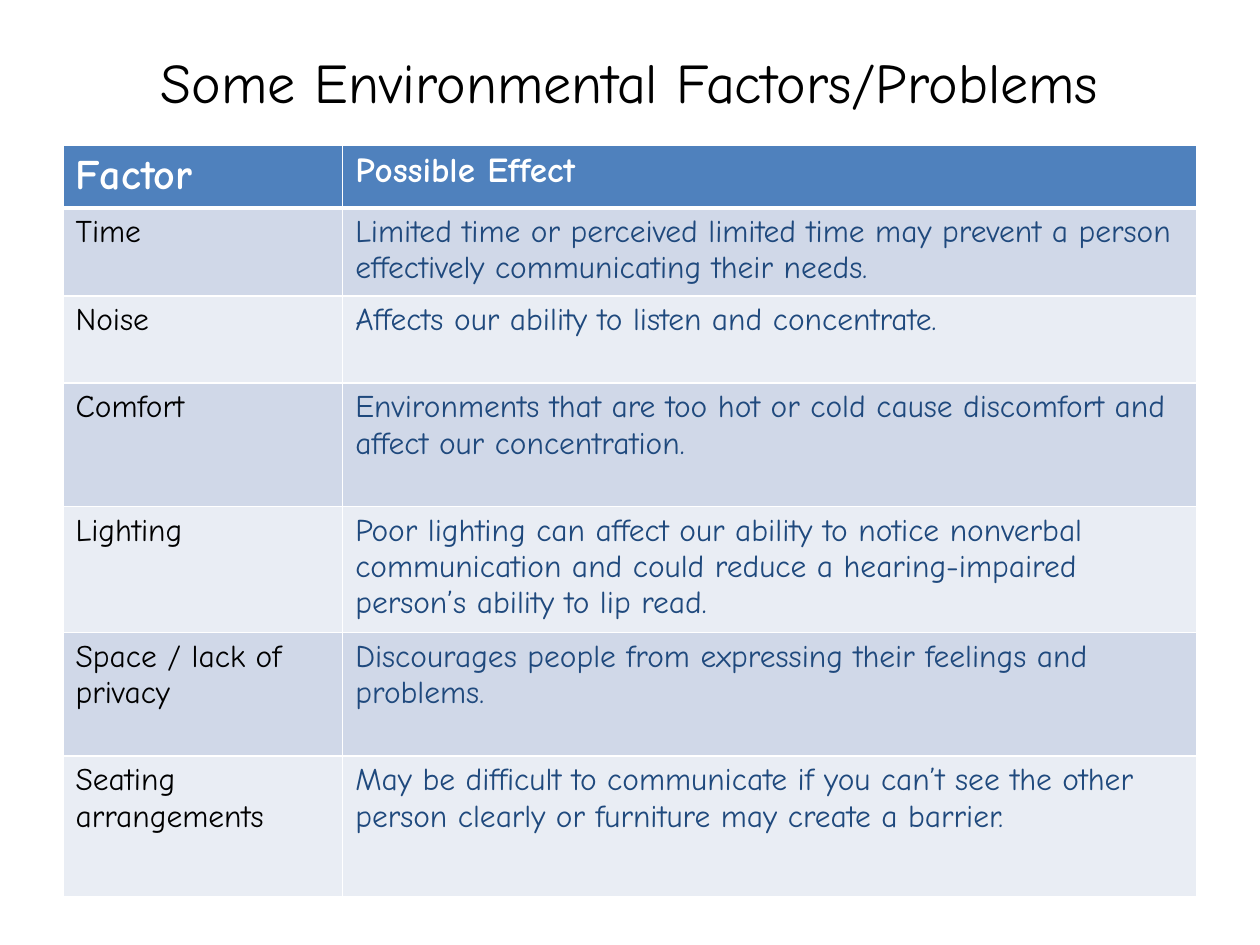
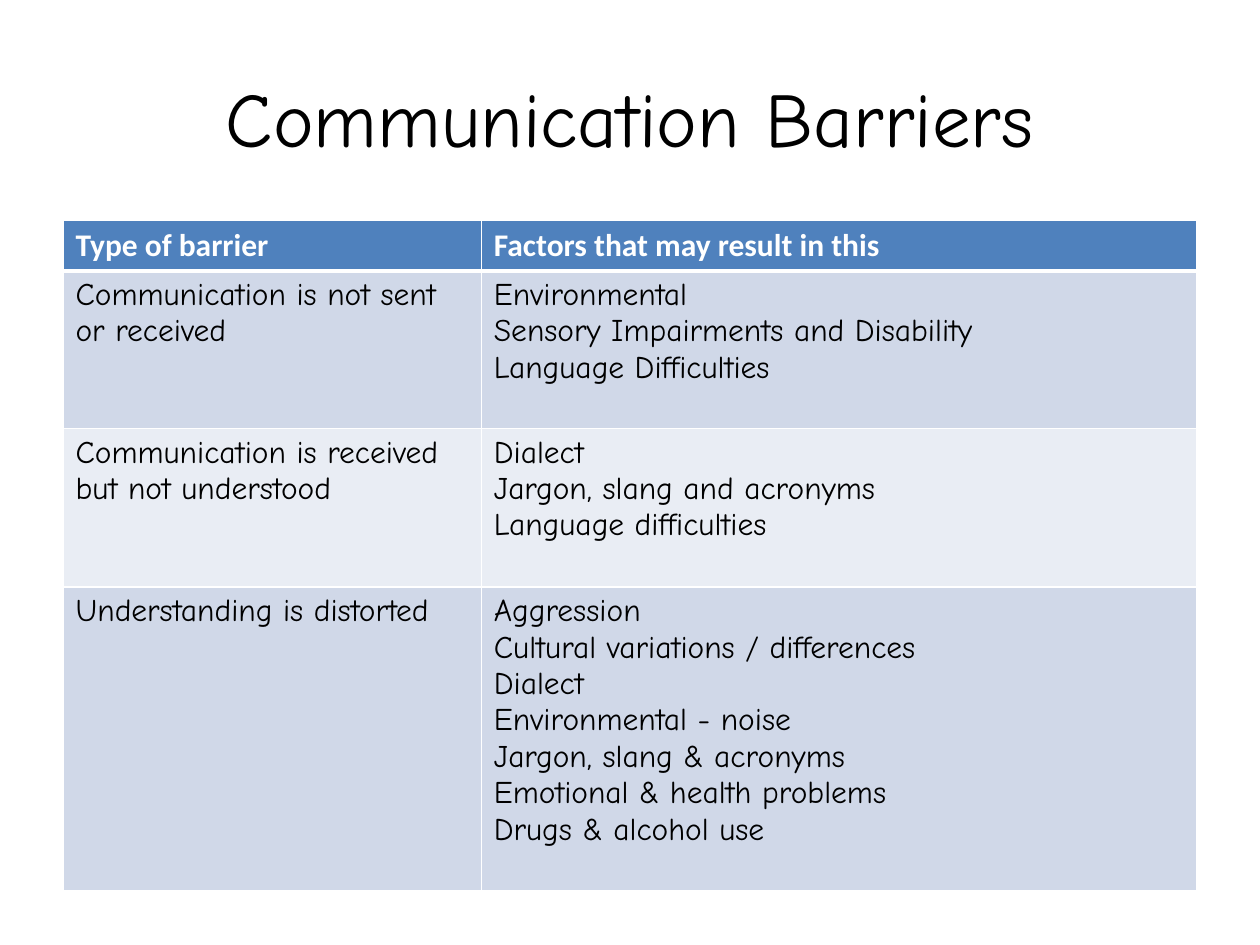
from dataclasses import dataclass

from lxml import etree
from pptx import Presentation
from pptx.dml.color import RGBColor
from pptx.enum.text import MSO_ANCHOR, PP_ALIGN
from pptx.oxml.ns import qn
from pptx.util import Inches, Pt

CENTER, MIDDLE = PP_ALIGN.CENTER, MSO_ANCHOR.MIDDLE
HAND, PLAIN = "Comic Neue", "Calibri"
BLACK, WHITE, NAVY, BLUE = "000000", "FFFFFF", "1F497D", "4F81BD"
BANDS = ("D0D8E8", "E9EDF4")
LEFT, WIDTH = 0.5, 9
BODY_SIZE = 18


@dataclass
class Style:
    size: float
    color: str = BLACK
    font: str = HAND
    bold: bool = False


@dataclass
class Page:
    title: str
    title_size: float
    title_height: float
    top: float
    widths: tuple[float, ...]
    heights: tuple[float, ...]
    heads: tuple[Style, ...]
    effect_color: str
    rows: list[tuple[str, str]]


PAGES = [
    Page(
        "Some Environmental Factors/Problems", 32, 0.69, 1.15, (2.22, 6.78),
        (0.48, 0.69, 0.69, 0.98, 0.98, 0.98, 1.12),
        (Style(24, WHITE, bold=True), Style(20, WHITE, bold=True)), NAVY,
        [
            ("Factor", "Possible Effect"),
            ("Time", "Limited time or perceived limited time may prevent a person "
                     "effectively communicating their needs."),
            ("Noise", "Affects our ability to listen and concentrate."),
            ("Comfort", "Environments that are too hot or cold cause discomfort and "
                        "affect our concentration."),
            ("Lighting", "Poor lighting can affect our ability to notice nonverbal "
                         "communication and could reduce a hearing-impaired "
                         "person’s ability to lip read."),
            ("Space / lack of privacy",
             "Discourages people from expressing their feelings and problems."),
            ("Seating arrangements",
             "May be difficult to communicate if you can’t see the other "
             "person clearly or furniture may create a barrier."),
        ],
    ),
    Page(
        "Communication Barriers", 44, 1.25, 1.75, (3.32, 5.68),
        (0.4, 1.25, 1.26, 2.41),
        (Style(18, WHITE, PLAIN, True),) * 2, BLACK,
        [
            ("Type of barrier", "Factors that may result in this"),
            ("Communication is not sent or received",
             "Environmental\nSensory Impairments and Disability\n"
             "Language Difficulties"),
            ("Communication is received but not understood",
             "Dialect\nJargon, slang and acronyms\nLanguage difficulties"),
            ("Understanding is distorted",
             "Aggression\nCultural variations / differences\nDialect\n"
             "Environmental - noise\nJargon, slang & acronyms\n"
             "Emotional & health problems\nDrugs & alcohol use"),
        ],
    ),
]


def rgb(color: str) -> RGBColor:
    return RGBColor.from_string(color)


def write(frame, text: str, style: Style, align=None) -> None:
    """Put each line of the text in its own paragraph."""
    for i, line in enumerate(text.split("\n")):
        para = frame.add_paragraph() if i else frame.paragraphs[0]
        para.alignment = align
        run = para.add_run()
        run.text = line
        font = run.font
        font.name, font.size, font.bold = style.font, Pt(style.size), style.bold
        font.color.rgb = rgb(style.color)


def edge(cell, row: int) -> None:
    """Draw white cell borders, with a thick rule under the header."""
    props = cell._tc.get_or_add_tcPr()
    thick = {0: "lnB", 1: "lnT"}.get(row)
    for side in ("lnL", "lnR", "lnT", "lnB"):
        width = Pt(3 if side == thick else 1)
        line = etree.SubElement(props, qn(f"a:{side}"), w=str(width))
        fill = etree.SubElement(line, qn("a:solidFill"))
        etree.SubElement(fill, qn("a:srgbClr"), val=WHITE)


def add_title(slide, page: Page) -> None:
    box = slide.shapes.add_textbox(
        Inches(LEFT), Inches(0.3), Inches(WIDTH), Inches(page.title_height))
    frame = box.text_frame
    frame.word_wrap = True
    frame.vertical_anchor = MIDDLE
    write(frame, page.title, Style(page.title_size), CENTER)


def add_grid(slide, page: Page) -> None:
    table = slide.shapes.add_table(
        len(page.rows), len(page.widths), Inches(LEFT), Inches(page.top),
        Inches(WIDTH), Inches(sum(page.heights))).table
    table.first_row = table.horz_banding = False
    for col, width in zip(table.columns, page.widths):
        col.width = Inches(width)
    for row, height in zip(table.rows, page.heights):
        row.height = Inches(height)
    body = (Style(BODY_SIZE), Style(BODY_SIZE, page.effect_color))
    for r, texts in enumerate(page.rows):
        styles = body if r else page.heads
        for c, (text, style) in enumerate(zip(texts, styles)):
            cell = table.cell(r, c)
            edge(cell, r)
            cell.fill.solid()
            cell.fill.fore_color.rgb = rgb(BANDS[(r - 1) % 2] if r else BLUE)
            write(cell.text_frame, text, style)


def main() -> None:
    deck = Presentation()
    deck.slide_width, deck.slide_height = Inches(10), Inches(7.5)
    for page in PAGES:
        slide = deck.slides.add_slide(deck.slide_layouts[6])
        add_title(slide, page)
        add_grid(slide, page)
    deck.save("out.pptx")


if __name__ == "__main__":
    main()
